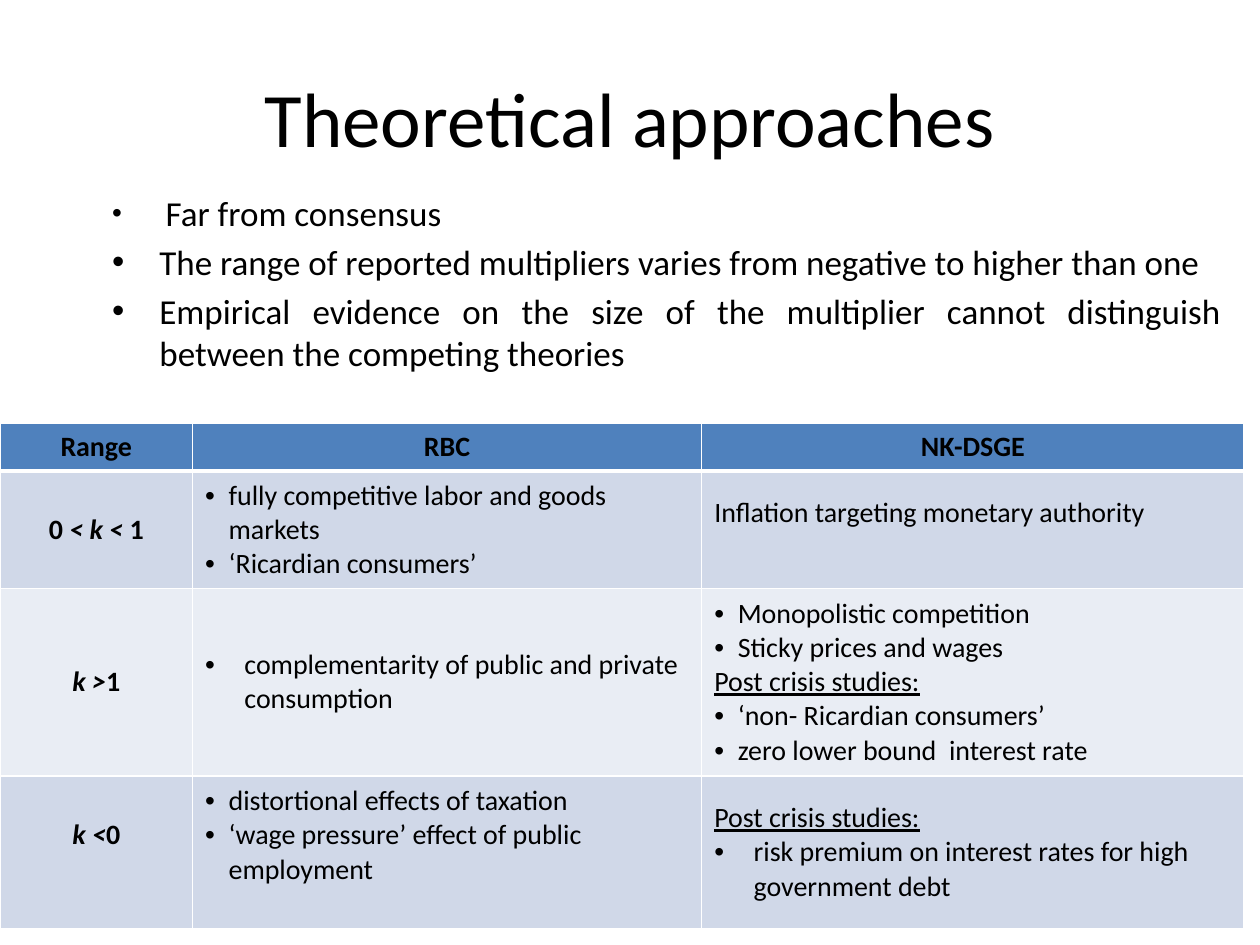
from dataclasses import dataclass

from lxml.etree import SubElement
from pptx import Presentation
from pptx.dml.color import RGBColor as Color
from pptx.enum.text import MSO_ANCHOR as Anchor, PP_ALIGN as Align
from pptx.oxml.ns import qn
from pptx.util import Pt


@dataclass(frozen=True)
class Theme:
    font: str = "Calibri"
    text: str = "000000"
    header: str = "4F81BD"
    bands: tuple = ("D0D8E8", "E9EDF4")
    border: str = "FFFFFF"
    title_size: float = 44
    body_size: float = 20
    table_size: float = 16


@dataclass(frozen=True)
class Span:
    text: str
    bold: bool = False
    italic: bool = False
    underline: bool = False
    size: float | None = None


@dataclass(frozen=True)
class Para:
    spans: tuple[Span, ...]
    align: Align = Align.LEFT
    indent: float = 0
    before: float = 0


@dataclass(frozen=True)
class Entry:
    paras: tuple[Para, ...]
    anchor: Anchor = Anchor.MIDDLE
    extra_bottom: float = 0


THEME = Theme()
NARROW, WIDE, BODY_INDENT = 13.5, 22.5, 27
LINE = 19.5
THIN, THICK = 1, 3


def bullet(text: str, indent: float = NARROW) -> Para:
    return Para((Span(text),), indent=indent)


def heading(text: str) -> Para:
    return Para((Span(text, underline=True),))


def header(text: str) -> Entry:
    return Entry((Para((Span(text, bold=True),), Align.CENTER),), Anchor.TOP)


def range_label(*parts: tuple[str, bool], extra_bottom: float = 0) -> Entry:
    spans = tuple(Span(text, bold=True, italic=italic) for text, italic in parts)
    return Entry((Para(spans, Align.CENTER),), extra_bottom=extra_bottom)


def point(*spans: Span) -> Para:
    return Para(spans, Align.JUSTIFY, BODY_INDENT, before=4)


POINTS = (
    point(Span(" ", size=16), Span("Far from consensus")),
    point(Span("The range of reported multipliers varies from negative to higher than one")),
    point(Span("Empirical evidence on the size of the multiplier cannot distinguish "
               "between the competing theories")),
)

COLUMN_WIDTHS = (110, 291, 310)
ROW_HEIGHTS = (27.2, 67, 107.3, 87.2)
ROWS = (
    (header("Range"), header("RBC"), header("NK-DSGE")),
    (
        range_label(("0 ", False), ("< k < ", True), ("1", False)),
        Entry((bullet("fully competitive labor and goods markets"),
               bullet("‘Ricardian consumers’"))),
        Entry((Para((Span("Inflation targeting monetary authority"),)),), extra_bottom=LINE),
    ),
    (
        range_label(("k >", True), ("1", False)),
        Entry((bullet("complementarity of public and private consumption", WIDE),)),
        Entry((bullet("Monopolistic competition"),
               bullet("Sticky prices and wages"),
               heading("Post crisis studies:"),
               bullet("‘non- Ricardian consumers’"),
               bullet("zero lower bound  interest rate"))),
    ),
    (
        range_label(("k <", True), ("0", False), extra_bottom=LINE),
        Entry((bullet("distortional effects of taxation"),
               bullet("‘wage pressure’ effect of public employment")), extra_bottom=LINE),
        Entry((heading("Post crisis studies:"),
               bullet("risk premium on interest rates for high government debt", WIDE))),
    ),
)


def write(frame, paras: tuple[Para, ...], size: float) -> None:
    for index, item in enumerate(paras):
        para = frame.add_paragraph() if index else frame.paragraphs[0]
        para.alignment = item.align
        para.space_before = Pt(item.before)
        if item.indent:
            properties = para._p.get_or_add_pPr()
            properties.set("marL", str(Pt(item.indent)))
            properties.set("indent", str(-Pt(item.indent)))
            SubElement(properties, qn("a:buFont"), typeface="Arial")
            SubElement(properties, qn("a:buChar"), char="•")
        for part in item.spans:
            span = para.add_run()
            span.text = part.text
            font = span.font
            font.name, font.size = THEME.font, Pt(part.size or size)
            font.bold, font.italic, font.underline = part.bold, part.italic, part.underline
            font.color.rgb = Color.from_string(THEME.text)


def add_text(page, bounds: tuple[float, ...], paras: tuple[Para, ...],
             size: float, anchor: Anchor) -> None:
    frame = page.shapes.add_textbox(*map(Pt, bounds)).text_frame
    frame.word_wrap = True
    frame.vertical_anchor = anchor
    write(frame, paras, size)


def add_borders(cell, top: float, bottom: float) -> None:
    properties = cell._tc.get_or_add_tcPr()
    for side, width in (("L", THIN), ("R", THIN), ("T", top), ("B", bottom)):
        line = SubElement(properties, qn(f"a:ln{side}"), w=str(Pt(width)))
        SubElement(SubElement(line, qn("a:solidFill")), qn("a:srgbClr"), val=THEME.border)


def fill_cell(cell, entry: Entry, row: int) -> None:
    add_borders(cell, THICK if row == 1 else THIN, THICK if row == 0 else THIN)
    cell.fill.solid()
    color = THEME.bands[(row - 1) % 2] if row else THEME.header
    cell.fill.fore_color.rgb = Color.from_string(color)
    cell.vertical_anchor = entry.anchor
    cell.margin_bottom = Pt(3.6 + entry.extra_bottom)
    write(cell.text_frame, entry.paras, THEME.table_size)


def add_comparison(page, left: float, top: float) -> None:
    table = page.shapes.add_table(
        len(ROWS), len(COLUMN_WIDTHS), Pt(left), Pt(top),
        Pt(sum(COLUMN_WIDTHS)), Pt(sum(ROW_HEIGHTS))).table
    for column, width in zip(table.columns, COLUMN_WIDTHS):
        column.width = Pt(width)
    for row, (entries, height) in enumerate(zip(ROWS, ROW_HEIGHTS)):
        table.rows[row].height = Pt(height)
        for column, entry in enumerate(entries):
            fill_cell(table.cell(row, column), entry, row)


def main() -> None:
    deck = Presentation()
    deck.slide_width, deck.slide_height = Pt(720), Pt(540)
    page = deck.slides.add_slide(deck.slide_layouts[6])
    title = (Para((Span("Theoretical approaches"),), Align.CENTER),)
    add_text(page, (36, 21.6, 648, 90), title, THEME.title_size, Anchor.MIDDLE)
    add_text(page, (57, 106, 648, 379), POINTS, THEME.body_size, Anchor.TOP)
    add_comparison(page, 0, 242)
    deck.save("out.pptx")


if __name__ == "__main__":
    main()
